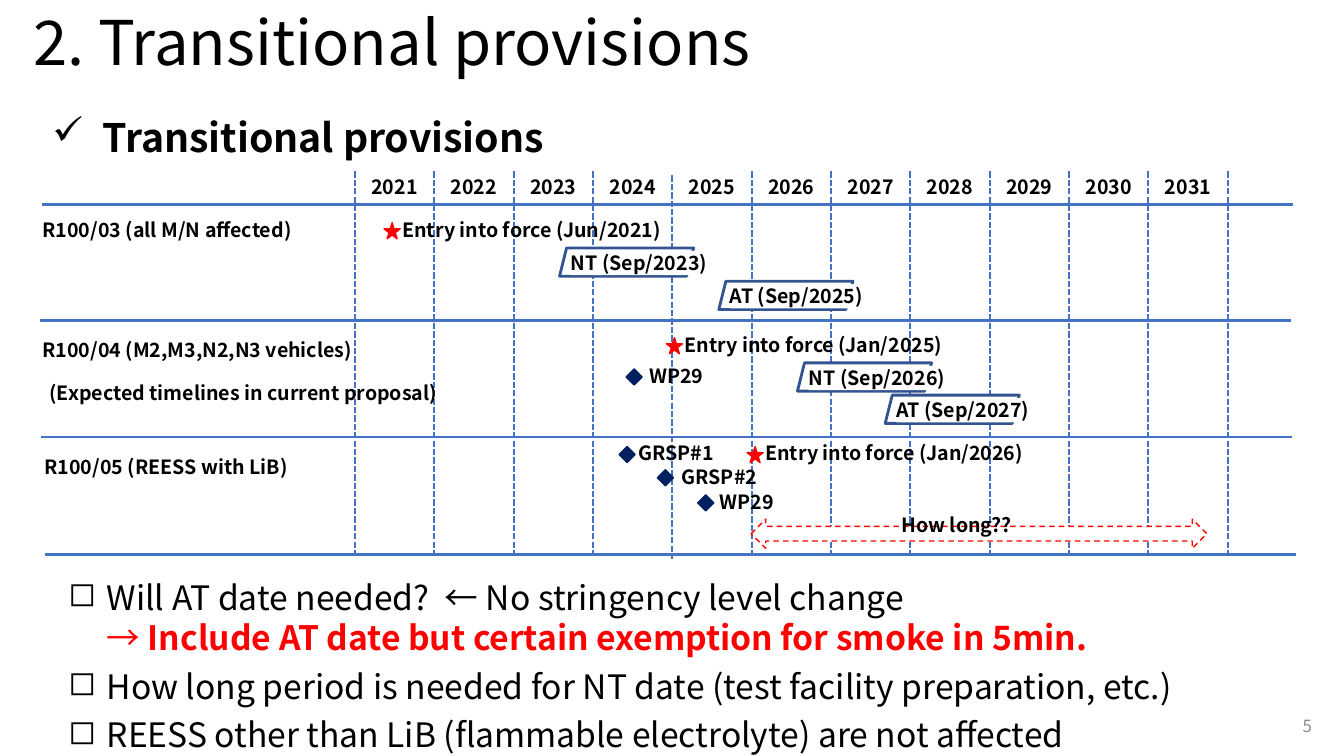
"""Builds the transitional provisions timeline slide."""
from lxml import etree
from pptx import Presentation
from pptx.dml.color import RGBColor
from pptx.enum.dml import MSO_LINE_DASH_STYLE as DASH
from pptx.enum.shapes import MSO_CONNECTOR, MSO_SHAPE as SHAPE
from pptx.enum.text import MSO_ANCHOR, MSO_AUTO_SIZE, PP_ALIGN
from pptx.oxml.ns import qn
from pptx.util import Inches, Pt

FONT = "Noto Sans CJK JP"
COLORS = {"black": "000000", "white": "FFFFFF", "grid": "4472C4", "box": "325491",
          "red": "FF0000", "navy": "002060", "gray": "8C8C8C"}

TITLE = "2. Transitional provisions"
HEADING = "Transitional provisions"
PAGE_NUMBER = "5"
YEARS = range(2021, 2032)
ROW_RULES = [(0.42, 2.03, 2.25), (0.4, 3.18, 1.5), (0.41, 4.34, 1.5), (0.45, 5.5, 2.25)]
LABELS = [
    ("R100/03 (all M/N affected)", 0.42, 2.11, 3.1),
    ("R100/04 (M2,M3,N2,N3 vehicles)", 0.42, 3.3, 3.57),
    ("(Expected timelines in current proposal)", 0.49, 3.73, 4.42),
    ("R100/05 (REESS with LiB)", 0.44, 4.46, 3.57),
    ("How long??", 8.94, 5.04, 1.25),
]
ENTRIES = [
    ("Entry into force (Jun/2021)", 3.81, 2.11),
    ("Entry into force (Jan/2025)", 6.61, 3.25),
    ("Entry into force (Jan/2026)", 7.41, 4.33),
]
MEETINGS = [
    ("WP29", 6.21, 6.44, 3.56),
    ("GRSP#1", 6.14, 6.33, 4.33),
    ("GRSP#2", 6.52, 6.76, 4.56),
    ("WP29", 6.92, 7.14, 4.81),
]
DEADLINES = [
    ("AT (Sep/2025)", 7.13, 2.79),
    ("NT (Sep/2023)", 5.55, 2.46),
    ("AT (Sep/2027)", 8.78, 3.92),
    ("NT (Sep/2026)", 7.91, 3.6),
]
QUESTIONS = [
    [[("Will AT date needed?  ← No stringency level change ", {})],
     [("→ ", {"color": "red"}),
      ("Include AT date but certain exemption for smoke in 5min.",
       {"color": "red", "bold": True})]],
    [[("How long period is needed for NT date (test facility preparation, etc.)", {})]],
    [[("REESS other than LiB (flammable electrolyte) are not affected", {})]],
]

GRID_LEFT, YEAR_WIDTH, GRID_TOP, GRID_BOTTOM = 3.52, 0.787, 1.7, 5.51
RULE_LENGTH, MARK_SIZE, LABEL_HEIGHT = 12.4, 0.16, 0.34
LABEL_INSETS = (0, 0.05, 0, 0.05)
SMALL = {"size": 14, "bold": True}

prs = Presentation()
prs.slide_width, prs.slide_height = Inches(13.33), Inches(7.5)
slide = prs.slides.add_slide(prs.slide_layouts[6])


def rgb(color):
    return RGBColor.from_string(COLORS[color])


def add_line(x1, y1, x2, y2, width, dash=None):
    line = slide.shapes.add_connector(
        MSO_CONNECTOR.STRAIGHT, *map(Inches, (x1, y1, x2, y2)))
    line.line.color.rgb = rgb("grid")
    line.line.width = Pt(width)
    line.line.dash_style = dash
    etree.SubElement(line._element.spPr, qn("a:effectLst"))


def add_mark(kind, box, fill, outline, width, dash=None):
    mark = slide.shapes.add_shape(kind, *map(Inches, box))
    mark.shadow.inherit = False
    mark.fill.solid()
    mark.fill.fore_color.rgb = rgb(fill)
    mark.line.color.rgb = rgb(outline)
    mark.line.width = Pt(width)
    mark.line.dash_style = dash


def add_run(paragraph, text, size, bold=False, color="black"):
    run = paragraph.add_run()
    run.text = text
    for name, value in {"size": Pt(size), "bold": bold, "name": FONT}.items():
        setattr(run.font, name, value)
    run.font.color.rgb = rgb(color)


def add_text(paragraphs, box, style, insets=(0.1, 0.05, 0.1, 0.05), bullet=None,
             indent=0, frame_format=None, paragraph_format=None):
    holder = slide.shapes.add_textbox(*map(Inches, box))
    frame = holder.text_frame
    sides = ("margin_left", "margin_top", "margin_right", "margin_bottom")
    settings = {"word_wrap": True, "auto_size": MSO_AUTO_SIZE.SHAPE_TO_FIT_TEXT,
                **dict(zip(sides, map(Inches, insets))), **(frame_format or {})}
    for name, value in settings.items():
        setattr(frame, name, value)
    for index, lines in enumerate(paragraphs):
        paragraph = frame.add_paragraph() if index else frame.paragraphs[0]
        for name, value in {"space_after": Pt(6), **(paragraph_format or {})}.items():
            setattr(paragraph, name, value)
        if bullet:
            properties = paragraph._p.get_or_add_pPr()
            properties.set("marL", str(Inches(indent)))
            properties.set("indent", str(-Inches(indent)))
            etree.SubElement(properties, qn("a:buChar")).set("char", bullet)
        for row, runs in enumerate(lines):
            if row:
                paragraph.add_line_break()
            for text, emphasis in runs:
                add_run(paragraph, text, **{**style, **emphasis})
    return holder


def add_label(text, left, top, width, **options):
    add_text([[[(text, {})]]], (left, top, width, LABEL_HEIGHT), SMALL, LABEL_INSETS,
             **options)


fixed = {"auto_size": MSO_AUTO_SIZE.NONE, "vertical_anchor": MSO_ANCHOR.MIDDLE}
add_text([[[(TITLE, {})]]], (0.23, 0, 12.88, 0.91), {"size": 44}, frame_format=fixed,
         paragraph_format={"line_spacing": 0.9, "space_after": Pt(0)})
add_text([[[(HEADING, {})]]], (0.42, 1.08, 12.22, 0.57), {"size": 28, "bold": True},
         bullet="✓", indent=0.5)
add_text([[[(PAGE_NUMBER, {})]]], (10.11, 7, 3, 0.4), {"size": 12, "color": "gray"},
         frame_format=fixed,
         paragraph_format={"alignment": PP_ALIGN.RIGHT, "space_after": Pt(0)})

for column in range(len(YEARS) + 1):
    x = GRID_LEFT + column * YEAR_WIDTH
    drop = 0.04 if column == YEARS.index(2025) else 0
    add_line(x, GRID_TOP + drop, x, GRID_BOTTOM + drop, 1.5, DASH.SQUARE_DOT)
for column, year in enumerate(YEARS):
    add_label(str(year), GRID_LEFT + column * YEAR_WIDTH, GRID_TOP - 0.01, YEAR_WIDTH,
              paragraph_format={"alignment": PP_ALIGN.CENTER})
for left, y, width in ROW_RULES:
    add_line(left, y, left + RULE_LENGTH, y, width)

for text, left, top in DEADLINES:
    add_mark(SHAPE.PARALLELOGRAM, (left, top, 1.33, 0.28), "white", "box", 2)
    cover = add_text([[[(text, {})]]], (left + 0.11, top + 0.03, 1.67, 0.24), SMALL,
                     (0, 0, 0, 0))
    cover.fill.solid()
    cover.fill.fore_color.rgb = rgb("white")

for text, left, top in ENTRIES:
    add_label(text, left + 0.18, top, 3.1)
    add_mark(SHAPE.STAR_5_POINT, (left, top + 0.1, MARK_SIZE, MARK_SIZE), "red", "red", 1)
for text, left, text_left, top in MEETINGS:
    add_label(text, text_left, top, 0.93)
    add_mark(SHAPE.DIAMOND, (left, top + 0.1, MARK_SIZE, MARK_SIZE), "navy", "navy", 1)

add_mark(SHAPE.LEFT_RIGHT_ARROW, (7.45, 5.15, 4.52, 0.29), "white", "red", 1, DASH.DASH)
for label in LABELS:
    add_label(*label)
add_text(QUESTIONS, (0.58, 5.67, 12.05, 1.88), {"size": 24}, bullet="◻", indent=0.38)

prs.save("out.pptx")
